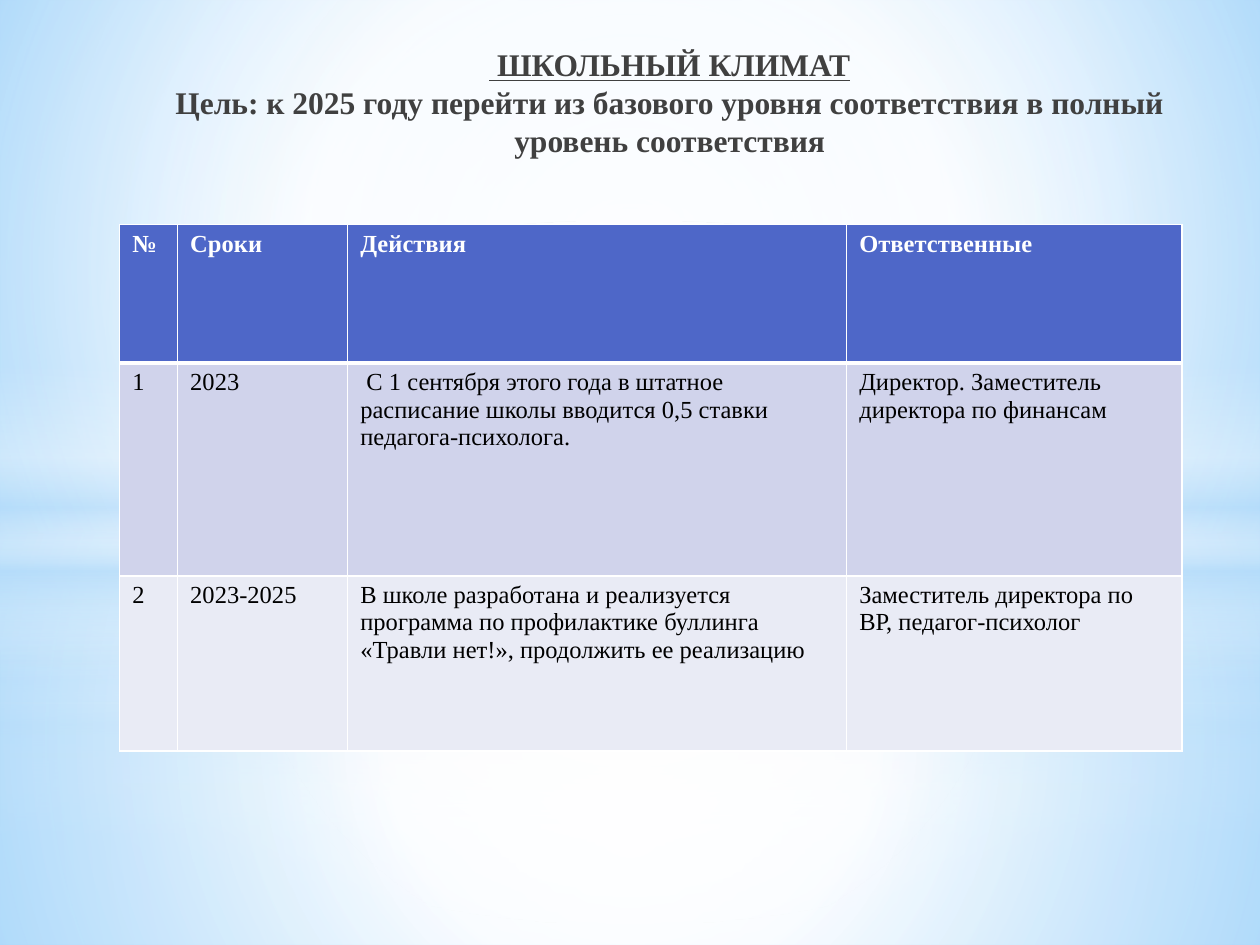
from lxml import etree
from pptx import Presentation
from pptx.dml.color import RGBColor
from pptx.enum.shapes import MSO_SHAPE
from pptx.enum.text import MSO_ANCHOR, PP_ALIGN
from pptx.oxml.ns import qn
from pptx.util import Inches, Pt

FONT = "Times New Roman"
WHITE = RGBColor(0xFF, 0xFF, 0xFF)
BLACK = RGBColor(0, 0, 0)
TITLE_GREY = RGBColor(0x40, 0x40, 0x40)
SKY = RGBColor(0xB4, 0xDC, 0xFA)
SKY_EDGE = RGBColor(0x5B, 0xB9, 0xFF)
SKY_CENTRE = RGBColor(0x9E, 0xD5, 0xFF)
HEADER_BLUE = RGBColor(0x4E, 0x67, 0xC8)
ROW_FILLS = [HEADER_BLUE, RGBColor(0xD0, 0xD3, 0xEB), RGBColor(0xE9, 0xEB, 0xF5)]

CENTRE = (50, 50, 50, 50)
BAND_STOPS = [(0, WHITE, 0), (29, WHITE, 30), (45, SKY, 40),
              (55, WHITE, 26), (65, SKY, 60), (100, WHITE, 0)]

COLUMN_WIDTHS = [0.46, 1.35, 3.96, 2.66]
ROW_HEIGHTS = [1.1, 1.69, 1.39]
ROWS = [
    ["№", "Сроки", "Действия", "Ответственные"],
    ["1", "2023",
     " С 1 сентября этого года в штатное расписание школы вводится 0,5 ставки "
     "педагога-психолога.",
     "Директор. Заместитель директора по финансам"],
    ["2", "2023-2025",
     "В школе разработана и реализуется программа по профилактике буллинга "
     "«Травли нет!», продолжить ее реализацию",
     "Заместитель директора по ВР, педагог-психолог"],
]


def add_node(parent, tag, **attributes):
    node = etree.SubElement(parent, qn(tag))
    for name, value in attributes.items():
        node.set(name, str(value))
    return node


def set_gradient(fill, holder, stops, focus=None):
    """Fill with (position, colour, opacity) stops: circular around focus, else vertical."""
    fill.solid()
    solid = holder.find(qn("a:solidFill"))
    gradient = etree.Element(qn("a:gradFill"), rotWithShape="1")
    stop_list = add_node(gradient, "a:gsLst")
    for position, color, opacity in stops:
        stop = add_node(stop_list, "a:gs", pos=position * 1000)
        tint = add_node(stop, "a:srgbClr", val=color)
        if opacity < 100:
            add_node(tint, "a:alpha", val=opacity * 1000)
    if focus:
        circle = add_node(gradient, "a:path", path="circle")
        sides = {side: value * 1000 for side, value in zip("ltrb", focus)}
        add_node(circle, "a:fillToRect", **sides)
    else:
        add_node(gradient, "a:lin", ang=90 * 60000, scaled=0)
    holder.replace(solid, gradient)


def add_glow(page, kind, top, height, stops, focus=CENTRE):
    shape = page.shapes.add_shape(kind, 0, Inches(top), Inches(10), Inches(height))
    shape.shadow.inherit = False
    shape.line.fill.background()
    set_gradient(shape.fill, shape.element.spPr, stops, focus)


def add_sky_layer(page, horizon, band_top, lower, upper, halo_edge):
    """Stack floor, sky, horizon band and halo; lower and upper hold opacities."""
    def sky_stops(middle, opacities):
        return list(zip((0, middle, 100), (WHITE, WHITE, SKY), opacities))

    add_glow(page, MSO_SHAPE.RECTANGLE, horizon, 7.5 - horizon, sky_stops(37, lower))
    add_glow(page, MSO_SHAPE.RECTANGLE, 0, horizon, sky_stops(48, upper))
    add_glow(page, MSO_SHAPE.RECTANGLE, band_top, 2.5, BAND_STOPS, focus=None)
    add_glow(page, MSO_SHAPE.OVAL, 1.75, 5.58,
             [(0, WHITE, 100), (halo_edge, WHITE, 0)])


def add_background(page):
    fill = page.background.fill
    fill.solid()
    holder = page.element.find(".//" + qn("p:bgPr"))
    set_gradient(fill, holder, [(0, SKY_CENTRE, 100), (60, WHITE, 100),
                                (100, SKY_EDGE, 100)], (20, 10, 20, 60))
    add_sky_layer(page, 5.58, 4.12, (91, 76, 79), (89, 62, 79), 56)
    add_sky_layer(page, 4.23, 2.9, (92, 77, 80), (90, 63, 80), 54)


def style_text(para, size, color, bold):
    para.font.name = FONT
    para.font.size = Pt(size)
    para.font.bold = bold
    para.font.color.rgb = color


def add_title(page, left, top, width, height):
    box = page.shapes.add_textbox(Inches(left), Inches(top), Inches(width), Inches(height))
    frame = box.text_frame
    frame.word_wrap = True
    frame.vertical_anchor = MSO_ANCHOR.BOTTOM
    para = frame.paragraphs[0]
    para.alignment = PP_ALIGN.CENTER
    style_text(para, 18, TITLE_GREY, True)
    heading = para.add_run()
    heading.text = " ШКОЛЬНЫЙ КЛИМАТ"
    heading.font.underline = True
    para.add_line_break()
    goal = para.add_run()
    goal.text = ("Цель: к 2025 году перейти из базового уровня соответствия "
                 "в полный уровень соответствия")


def set_borders(cell, top, bottom):
    properties = cell._tc.get_or_add_tcPr()
    for tag, width in (("a:lnL", 1), ("a:lnR", 1), ("a:lnT", top), ("a:lnB", bottom)):
        line = add_node(properties, tag, w=Pt(width))
        add_node(add_node(line, "a:solidFill"), "a:srgbClr", val=WHITE)


def add_plan_table(page, left, top, width, height):
    table = page.shapes.add_table(len(ROWS), len(COLUMN_WIDTHS), Inches(left), Inches(top),
                                  Inches(width), Inches(height)).table
    for column, column_width in zip(table.columns, COLUMN_WIDTHS):
        column.width = Inches(column_width)
    for index, (row, texts) in enumerate(zip(table.rows, ROWS)):
        row.height = Inches(ROW_HEIGHTS[index])
        header = index == 0
        for cell, text in zip(row.cells, texts):
            cell.text = text
            style_text(cell.text_frame.paragraphs[0], 14, WHITE if header else BLACK, header)
            set_borders(cell, top=3 if index == 1 else 1, bottom=3 if header else 1)
            cell.fill.solid()
            cell.fill.fore_color.rgb = ROW_FILLS[index]


def main():
    deck = Presentation()
    deck.slide_width, deck.slide_height = Inches(10), Inches(7.5)
    page = deck.slides.add_slide(deck.slide_layouts[6])
    add_background(page)
    add_title(page, 1.22, 0.21, 8.19, 1.1)
    add_plan_table(page, 0.95, 1.78, sum(COLUMN_WIDTHS), sum(ROW_HEIGHTS))
    deck.save("out.pptx")


if __name__ == "__main__":
    main()
